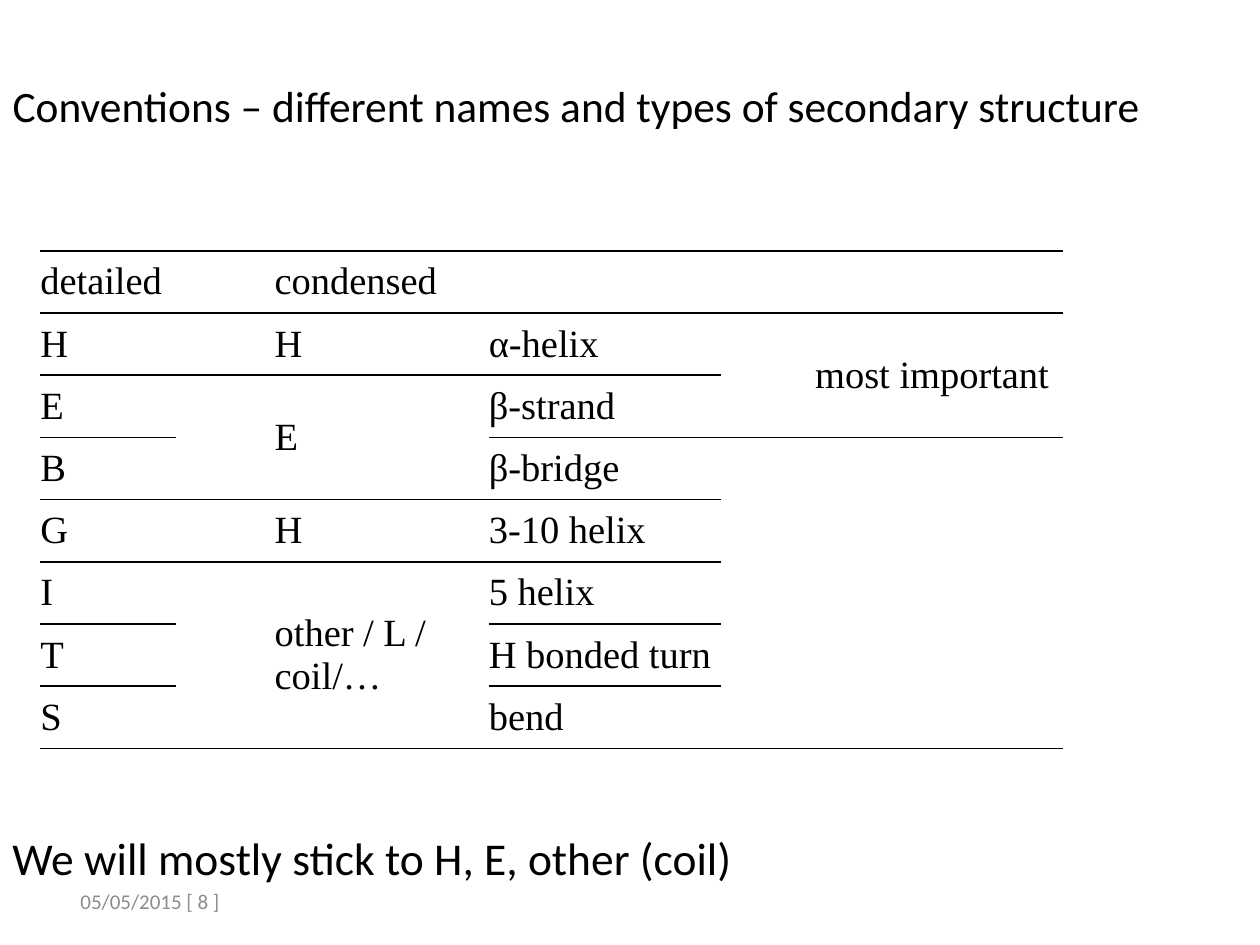
"""Build a slide on naming conventions for secondary structure."""
from lxml.etree import SubElement
from pptx import Presentation
from pptx.dml.color import RGBColor
from pptx.enum.text import MSO_ANCHOR as Anchor, MSO_AUTO_SIZE as AutoSize, PP_ALIGN as Align
from pptx.oxml.ns import qn
from pptx.util import Inches, Pt

BLACK = RGBColor(0x00, 0x00, 0x00)
GREY = RGBColor(0x8C, 0x8C, 0x8C)
SANS, SERIF = "Calibri", "Times New Roman"
GRID = Inches(0.1)
COLUMNS, ROWS = 100, 75
TITLE_ONLY = 5

TABLE_COLUMNS = (10.8, 7.8, 17, 18.4, 7.5, 19.7)
TABLE_ROW = 4.94
TABLE_ROWS = (
    ("detailed", "", "condensed", "", "", ""),
    ("H", "", "H", "α-helix", "", "most important"),
    ("E", "", "E", "β-strand", "", ""),
    ("B", "", "", "β-bridge", "", ""),
    ("G", "", "H", "3-10 helix", "", ""),
    ("I", "", "other / L / coil/…", "5 helix", "", ""),
    ("T", "", "", "H bonded turn", "", ""),
    ("S", "", "", "bend", "", ""),
)
MERGES = ((1, 2, (4, 5)), (2, 3, (1, 2)), (3, 7, (4, 5)), (5, 7, (1, 2)))


def grid(count):
    """Convert a count of grid units to a length."""
    return round(count * GRID)


def format_text(text_frame, font_name, size, color):
    """Apply one font to every run of a text frame."""
    for paragraph in text_frame.paragraphs:
        paragraph.alignment = Align.LEFT
        for run in paragraph.runs:
            run.font.name = font_name
            run.font.size = Pt(size)
            run.font.color.rgb = color


def fill_text(shape, text, size, color=BLACK, anchor=Anchor.TOP):
    """Write one line of sans-serif text into a shape."""
    text_frame = shape.text_frame
    text_frame.text = text
    text_frame.word_wrap = True
    text_frame.auto_size = AutoSize.NONE
    text_frame.vertical_anchor = anchor
    format_text(text_frame, SANS, size, color)


def add_title(slide, text):
    """Place the heading in the title placeholder."""
    title = slide.shapes.title
    title.left, title.top = grid(0), grid(5.8)
    title.width, title.height = grid(98.7), grid(5.3)
    fill_text(title, text, 24.8)


def add_text(slide, text, left, top, width, height, size, **style):
    """Add a text box on the grid."""
    box = slide.shapes.add_textbox(*map(grid, (left, top, width, height)))
    fill_text(box, text, size, **style)


def rule_cell(cell):
    """Draw lines above and below a cell and none at its sides."""
    properties = cell._tc.get_or_add_tcPr()
    for position, side in enumerate(("lnL", "lnR", "lnT", "lnB")):
        line = properties.makeelement(qn(f"a:{side}"), {"w": str(Pt(1))})
        properties.insert(position, line)
        if side in ("lnT", "lnB"):
            fill = SubElement(line, qn("a:solidFill"))
            SubElement(fill, qn("a:srgbClr"), val=str(BLACK))
        else:
            SubElement(line, qn("a:noFill"))


def format_cell(cell, text):
    """Write a table cell without fill or margins."""
    cell.text = text
    cell.fill.background()
    cell.vertical_anchor = Anchor.MIDDLE
    cell.margin_left = cell.margin_right = cell.margin_top = cell.margin_bottom = 0
    format_text(cell.text_frame, SERIF, 22, BLACK)
    if not cell.is_spanned:
        rule_cell(cell)


def add_structure_table(slide, left, top):
    """Add the table of structure names."""
    frame = slide.shapes.add_table(
        len(TABLE_ROWS), len(TABLE_COLUMNS), grid(left), grid(top),
        grid(sum(TABLE_COLUMNS)), grid(TABLE_ROW * len(TABLE_ROWS)))
    table = frame.table
    table.first_row = table.horz_banding = False
    for column, width in zip(table.columns, TABLE_COLUMNS):
        column.width = grid(width)
    for first, last, columns in MERGES:
        for column in columns:
            table.cell(first, column).merge(table.cell(last, column))
    for row, texts in zip(table.rows, TABLE_ROWS):
        row.height = grid(TABLE_ROW)
        for cell, text in zip(row.cells, texts):
            format_cell(cell, text)


def main():
    """Build and save the presentation."""
    presentation = Presentation()
    presentation.slide_width, presentation.slide_height = grid(COLUMNS), grid(ROWS)
    slide = presentation.slides.add_slide(presentation.slide_layouts[TITLE_ONLY])
    add_title(slide, "Conventions – different names and types of secondary structure")
    add_text(slide, "We will mostly stick to H, E, other (coil)", 0, 65.4, 98.7, 5.3, 26)
    add_text(slide, "05/05/2015 [ 8 ]", 5.4, 69.5, 22.9, 4, 12,
             color=GREY, anchor=Anchor.MIDDLE)
    add_structure_table(slide, 3.2, 19.9)
    presentation.save("out.pptx")


if __name__ == "__main__":
    main()
